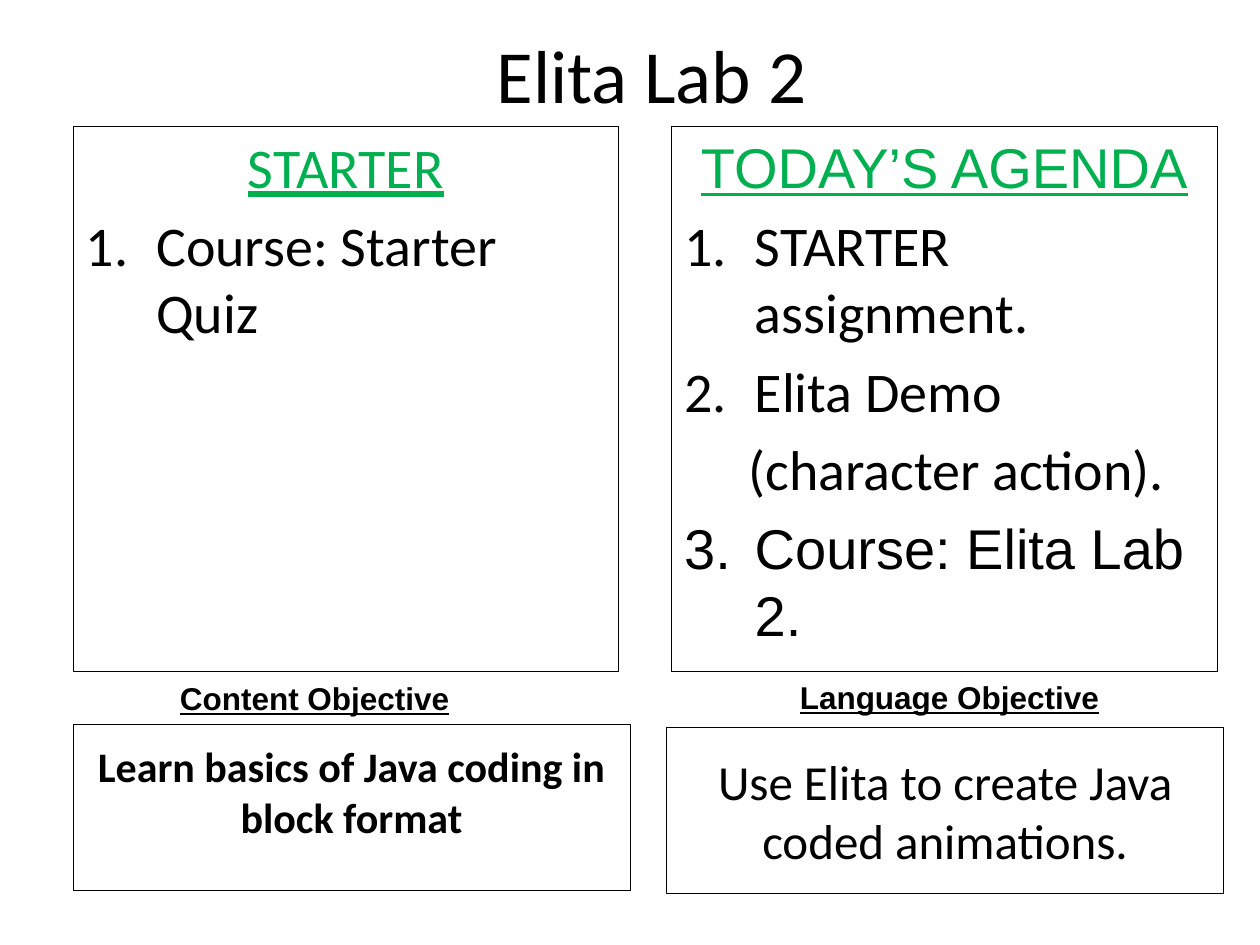
from dataclasses import dataclass

from lxml.etree import SubElement
from pptx import Presentation
from pptx.dml.color import RGBColor
from pptx.enum.shapes import MSO_SHAPE
from pptx.enum.text import MSO_ANCHOR, MSO_AUTO_SIZE, PP_ALIGN
from pptx.oxml.ns import qn
from pptx.util import Inches, Pt


@dataclass(frozen=True)
class Theme:
    text: RGBColor = RGBColor(0x00, 0x00, 0x00)
    heading: RGBColor = RGBColor(0x00, 0xB0, 0x50)
    main_font: str = "Calibri"
    second_font: str = "Arial"
    title_size: float = 42.9
    list_size: float = 32
    label_size: float = 18
    content_size: float = 24
    language_size: float = 28
    border_width: float = 0.5


class SlideBuilder:
    def __init__(self, slide, theme):
        self.slide = slide
        self.theme = theme

    def place(self, shape, left, top, width, height):
        shape.left, shape.top = Inches(left), Inches(top)
        shape.width, shape.height = Inches(width), Inches(height)

    def border(self, shape):
        shape.line.color.rgb = self.theme.text
        shape.line.width = Pt(self.theme.border_width)

    def format(self, paragraph, size, font=None, color=None, bold=False,
               underline=False, alignment=PP_ALIGN.LEFT):
        paragraph.alignment = alignment
        paragraph.font.name = font or self.theme.main_font
        paragraph.font.size = Pt(size)
        paragraph.font.color.rgb = color or self.theme.text
        paragraph.font.bold = bold
        paragraph.font.underline = underline

    def indent(self, paragraph, left, first_line=0, number=None):
        """Set the indent, with a number in front unless number is None."""
        properties = paragraph._p.get_or_add_pPr()
        properties.set("marL", str(Inches(left)))
        properties.set("indent", str(Inches(first_line)))
        if number is None:
            SubElement(properties, qn("a:buNone"))
            return
        SubElement(properties, qn("a:buFont"), typeface="+mj-lt")
        bullet = SubElement(properties, qn("a:buAutoNum"), type="arabicPeriod")
        if number > 1:
            bullet.set("startAt", str(number))

    def title(self, text, *box):
        shape = self.slide.shapes.title
        self.place(shape, *box)
        frame = shape.text_frame
        frame.text = text
        frame.auto_size = MSO_AUTO_SIZE.NONE
        frame.vertical_anchor = MSO_ANCHOR.MIDDLE
        self.format(frame.paragraphs[0], self.theme.title_size,
                    alignment=PP_ALIGN.CENTER)

    def list_panel(self, placeholder, heading, heading_font, items, *box):
        """Fill a panel; each item is (text, font, left, first line, number)."""
        self.place(placeholder, *box)
        self.border(placeholder)
        frame = placeholder.text_frame
        frame.auto_size = MSO_AUTO_SIZE.NONE
        size = self.theme.list_size
        paragraph = frame.paragraphs[0]
        paragraph.text = heading
        self.format(paragraph, size, heading_font, self.theme.heading,
                    underline=True, alignment=PP_ALIGN.CENTER)
        paragraph.space_before = Pt(size * 0.2)
        self.indent(paragraph, 0)
        for text, font, left, first_line, number in items:
            paragraph = frame.add_paragraph()
            paragraph.text = text
            self.format(paragraph, size, font)
            paragraph.space_before = Pt(size * 0.2)
            self.indent(paragraph, left, first_line, number)

    def label(self, text, *box):
        shape = self.slide.shapes.add_textbox(*map(Inches, box))
        frame = shape.text_frame
        frame.word_wrap = True
        frame.text = text
        self.format(frame.paragraphs[0], self.theme.label_size,
                    self.theme.second_font, bold=True, underline=True)

    def objective(self, text, size, bold, bottom_margin, *box):
        shape = self.slide.shapes.add_shape(MSO_SHAPE.RECTANGLE, *map(Inches, box))
        shape.shadow.inherit = False
        shape.fill.background()
        self.border(shape)
        frame = shape.text_frame
        frame.word_wrap = True
        frame.vertical_anchor = MSO_ANCHOR.MIDDLE
        frame.margin_bottom = Inches(bottom_margin)
        frame.text = text
        self.format(frame.paragraphs[0], size, bold=bold,
                    alignment=PP_ALIGN.CENTER)


def main():
    presentation = Presentation()
    presentation.slide_width = Inches(10)
    presentation.slide_height = Inches(7.5)
    two_content_layout = presentation.slide_layouts[3]
    slide = presentation.slides.add_slide(two_content_layout)
    theme = Theme()
    builder = SlideBuilder(slide, theme)
    main_font, second_font = theme.main_font, theme.second_font
    hanging = (0.56, -0.56)

    builder.title("Elita Lab 2", 0.92, 0.17, 8.5, 0.83)
    builder.list_panel(
        slide.placeholders[1], "STARTER", main_font,
        [("Course: Starter Quiz", main_font, *hanging, 1)],
        0.58, 1, 4.33, 4.33)
    builder.list_panel(
        slide.placeholders[2], "TODAY’S AGENDA", second_font,
        [("STARTER assignment.", main_font, *hanging, 1),
         ("Elita Demo", main_font, *hanging, 1),
         ("(character action).", main_font, 0.51, 0, None),
         ("Course: Elita Lab 2.", second_font, *hanging, 3)],
        5.33, 1, 4.33, 4.33)

    builder.label("Content Objective", 1.33, 5.34, 3.33, 0.4)
    builder.label("Language Objective", 6.25, 5.33, 3.08, 0.4)
    builder.objective("Learn basics of Java coding in block format",
                      theme.content_size, True, 0.31, 0.58, 5.75, 4.42, 1.32)
    builder.objective("Use Elita to create Java coded animations.",
                      theme.language_size, False, 0.05, 5.29, 5.77, 4.42, 1.32)

    presentation.save("out.pptx")


if __name__ == "__main__":
    main()
